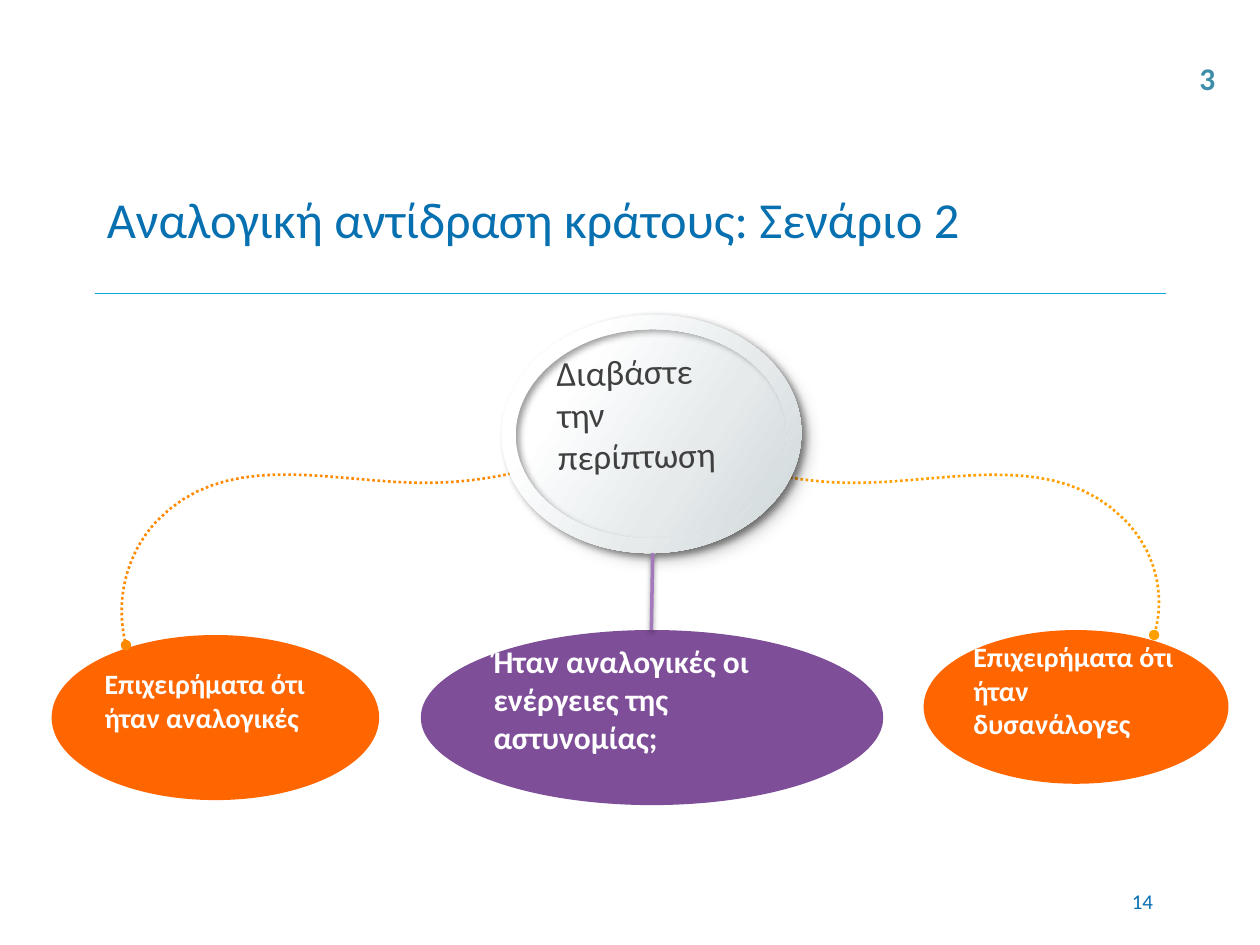
from dataclasses import dataclass
from typing import Optional

from lxml import etree
from pptx import Presentation
from pptx import util as u
from pptx.dml.color import RGBColor
from pptx.enum import dml, shapes, text
from pptx.oxml.ns import qn

WIDTH, HEIGHT = 10, 7.5
FONT = "Calibri"
BLUE = "0770B1"
ORANGE = "FF6600"
SILVER = [(23, "FFFFFF"), (63, "E6EAEB"), (100, "CDD5D8")]
CURVE_STEPS = 16


@dataclass
class Box:
    left: float
    top: float
    width: float
    height: float


@dataclass
class Label:
    words: str
    size: float
    color: str
    bold: bool = False
    align: text.PP_ALIGN = text.PP_ALIGN.LEFT
    anchor: text.MSO_ANCHOR = text.MSO_ANCHOR.MIDDLE
    side: float = 0.1
    lift: float = 0
    wrap: bool = True


@dataclass
class Shadow:
    blur: float
    distance: float
    angle: float


@dataclass
class Oval:
    box: Box
    fill: str
    label: Label


@dataclass
class Curve:
    color: str
    points: list


def across(share: float) -> u.Emu:
    return u.Inches(WIDTH * share / 100)


def down(share: float) -> u.Emu:
    return u.Inches(HEIGHT * share / 100)


def place(box: Box) -> tuple:
    return across(box.left), down(box.top), across(box.width), down(box.height)


def paint(color_format, color: str) -> None:
    color_format.rgb = RGBColor.from_string(color)


def add(parent, tag: str, **attributes):
    return etree.SubElement(parent, qn(tag), {k: str(v) for k, v in attributes.items()})


def write(sp, label: Label) -> None:
    tf = sp.text_frame
    tf.word_wrap = label.wrap
    tf.vertical_anchor = label.anchor
    tf.margin_left = tf.margin_right = u.Inches(label.side)
    tf.margin_top = u.Inches(0.05)
    tf.margin_bottom = u.Inches(0.05 + label.lift)
    p = tf.paragraphs[0]
    p.text = label.words
    p.alignment = label.align
    for r in p.runs:
        r.font.name = FONT
        r.font.size = u.Pt(label.size)
        r.font.bold = label.bold
        paint(r.font.color, label.color)


def add_text(slide, box: Box, label: Label) -> None:
    write(slide.shapes.add_textbox(*place(box)), label)


def cast_shadow(effects, shadow: Shadow) -> None:
    outer = add(effects, "a:outerShdw", blurRad=u.Pt(shadow.blur), dist=u.Pt(shadow.distance),
                dir=int(shadow.angle * 60000), algn="tl", rotWithShape=0)
    add(add(outer, "a:srgbClr", val="000000"), "a:alpha", val=38000)


def add_preset(parent, kind, box: Box, fill: Optional[str] = None):
    sp = parent.shapes.add_shape(kind, *place(box))
    sp.shadow.inherit = False
    sp.line.fill.background()
    if fill:
        sp.fill.solid()
        paint(sp.fill.fore_color, fill)
    return sp


def add_silver(parent, kind, box: Box, shadow: Shadow):
    sp = add_preset(parent, kind, box)
    sp.rotation = 358.8
    sp.fill.gradient()
    gradient = sp._element.spPr.find(qn("a:gradFill"))
    for child in list(gradient):
        gradient.remove(child)
    stops = add(gradient, "a:gsLst")
    for position, color in SILVER:
        add(add(stops, "a:gs", pos=position * 1000), "a:srgbClr", val=color)
    add(gradient, "a:lin", ang=35 * 60000, scaled=0)
    cast_shadow(sp._element.spPr.find(qn("a:effectLst")), shadow)
    return sp


def add_line(slide, start: tuple, end: tuple, color: str, width: float,
             shadow: Optional[Shadow] = None) -> None:
    line = slide.shapes.add_connector(shapes.MSO_CONNECTOR.STRAIGHT, across(start[0]),
                                      down(start[1]), across(end[0]), down(end[1]))
    paint(line.line.color, color)
    line.line.width = u.Pt(width)
    effects = add(line._element.spPr, "a:effectLst")
    if shadow:
        cast_shadow(effects, shadow)


def bezier(points: list, t: float) -> tuple:
    weights = ((1 - t) ** 3, 3 * t * (1 - t) ** 2, 3 * t * t * (1 - t), t ** 3)
    x, y = (sum(w * pt[axis] for w, pt in zip(weights, points)) for axis in (0, 1))
    return across(x), down(y)


def add_curve(slide, curve: Curve) -> None:
    pts = curve.points
    track = [bezier(pts[i:i + 4], step / CURVE_STEPS)
             for i in range(0, len(pts) - 1, 3) for step in range(1, CURVE_STEPS + 1)]
    builder = slide.shapes.build_freeform(across(pts[0][0]), down(pts[0][1]))
    builder.add_line_segments(track, close=False)
    sp = builder.convert_to_shape()
    sp.shadow.inherit = False
    sp.fill.background()
    paint(sp.line.color, curve.color)
    sp.line.width = u.Pt(1.5)
    sp.line.dash_style = dml.MSO_LINE.ROUND_DOT
    ln = sp._element.spPr.find(qn("a:ln"))
    for end in ("a:headEnd", "a:tailEnd"):
        add(ln, end, type="oval")


def answer(words: str, size: float, lift: float) -> Label:
    return Label(words, size, "FFFFFF", bold=True, side=0.04, lift=lift)


LEFT = Oval(Box(4.1, 67.2, 26, 17.47), ORANGE,
            answer("Επιχειρήματα ότι ήταν αναλογικές", 16, 0.27))
RIGHT = Oval(Box(73.3, 66.67, 24.2, 16.27), ORANGE,
             answer("Επιχειρήματα ότι ήταν δυσανάλογες", 16, 0.27))
QUESTION = Oval(Box(33.4, 66.67, 36.7, 18.53), "7E4E99",
                answer("Ήταν αναλογικές οι ενέργειες της αστυνομίας;", 18, 0.3))
LEFT_CURVE = Curve("FF8A00", [
    (41.7, 49.73), (38.7, 50.8), (35.7, 51.2), (32.6, 51.07), (25.6, 50.8),
    (17.7, 47.73), (12.4, 55.2), (10, 58.67), (9.1, 63.6), (10, 68.27)])
RIGHT_CURVE = Curve("FF9F00", [
    (59.9, 49.73), (62.9, 50.8), (65.9, 51.2), (69, 51.07), (76, 50.8),
    (83.9, 47.87), (89.2, 54.93), (91.6, 58.13), (92.6, 62.8), (91.6, 67.2)])


def add_oval(slide, oval: Oval) -> None:
    write(add_preset(slide, shapes.MSO_SHAPE.OVAL, oval.box, oval.fill), oval.label)


def add_medallion(slide) -> None:
    group = slide.shapes.add_group_shape()
    disc = add_silver(group, shapes.MSO_SHAPE.OVAL, Box(40.6, 34, 22.3, 23.87),
                      Shadow(12, 7.1, 39))
    write(disc, Label("Διαβάστε την περίπτωση", 20, "404040", side=0.04, lift=0.34))
    ring = add_silver(group, shapes.MSO_SHAPE.DONUT, Box(39.8, 33.33, 23.8, 25.2),
                      Shadow(4, 2.8, 39))
    ring.adjustments[0] = 0.06


def main() -> None:
    prs = Presentation()
    prs.slide_width, prs.slide_height = u.Inches(WIDTH), u.Inches(HEIGHT)
    slide = prs.slides.add_slide(prs.slide_layouts[6])
    add_line(slide, (7.5, 31.07), (92.5, 31.07), "0BA7DF", 0.75)
    add_text(slide, Box(7.5, 21.07, 85, 10),
             Label("Αναλογική αντίδραση κράτους: Σενάριο 2", 28.8, BLUE, lift=0.44))
    add_text(slide, Box(71.7, 92.67, 20.8, 5.33),
             Label("14", 12, BLUE, align=text.PP_ALIGN.RIGHT))
    for oval, curve in ((LEFT, LEFT_CURVE), (RIGHT, RIGHT_CURVE)):
        add_oval(slide, oval)
        add_curve(slide, curve)
    add_oval(slide, QUESTION)
    add_medallion(slide)
    add_line(slide, (51.8, 58.53), (51.7, 66.67), "A379BB", 2, Shadow(3.1, 1.6, 90))
    add_text(slide, Box(94.2, 5.6, 3.3, 5.33),
             Label("3", 18, "3E8EA9", bold=True, anchor=text.MSO_ANCHOR.TOP, wrap=False))
    prs.save("out.pptx")


if __name__ == "__main__":
    main()
